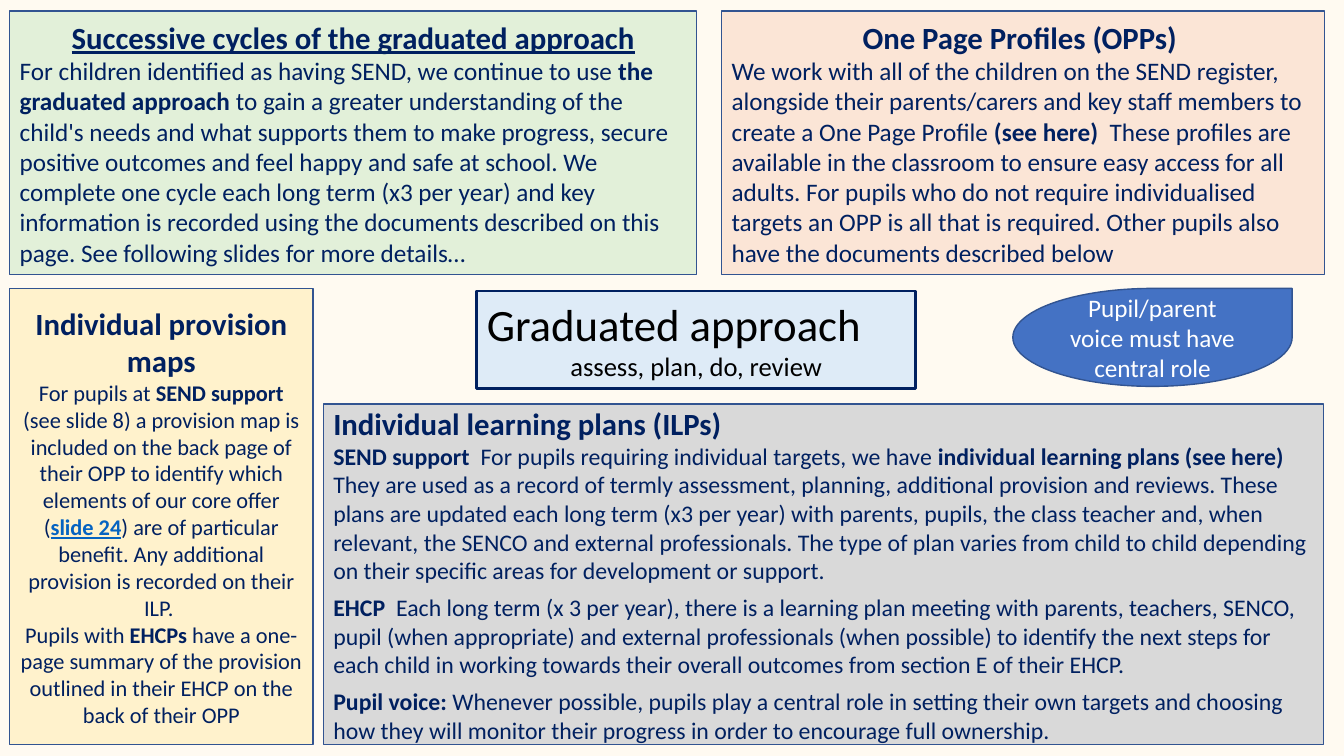
import pptx
import pptx.util
import pptx.dml.color
import pptx.enum.shapes
import pptx.enum.text

Pt = pptx.util.Pt
SHAPE = pptx.enum.shapes.MSO_SHAPE
ALIGN = pptx.enum.text.PP_ALIGN
ANCHOR = pptx.enum.text.MSO_ANCHOR
NAVY, EDGE, LINK = "002060", "325491", "0563C1"

CYCLES = [
    [("For children identified as having SEND, we continue to use ", ""),
     ("the graduated approach", "bold"),
     (" to gain a greater understanding of the child's needs and what supports them to make "
      "progress, secure positive outcomes and feel happy and safe at school. We complete one "
      "cycle each long term (x3 per year) and key information is recorded using the documents "
      "described on this page. See following slides for more details…", "")],
]
PROFILES = [
    [("We work with all of the children on the SEND register, alongside their parents/carers "
      "and key staff members to create a One Page Profile ", ""),
     ("(see here) ", "bold"),
     (" These profiles are available in the classroom to ensure easy access for all adults. "
      "For pupils who do not require individualised targets an OPP is all that is required. "
      "Other pupils also have the documents described below", "")],
]
PLANS = [
    [("SEND support  ", "bold"),
     ("For pupils requiring individual targets, we have ", ""),
     ("individual learning plans (see here) ", "bold"),
     ("They are used as a record of termly assessment, planning, additional provision and "
      "reviews. These plans are updated each long term (x3 per year) with parents, pupils, the "
      "class teacher and, when relevant, the SENCO and external professionals. The type of plan "
      "varies from child to child depending on their specific areas for development or "
      "support.", "")],
    [("EHCP  ", "bold"),
     ("Each long term (x 3 per year), there is a learning plan meeting with parents, teachers, "
      "SENCO, pupil (when appropriate) and external professionals (when possible) to identify "
      "the next steps for each child in working towards their overall outcomes from section E "
      "of their EHCP.", "")],
    [("Pupil voice: ", "bold"),
     ("Whenever possible, pupils play a central role in setting their own targets and choosing "
      "how they will monitor their progress in order to encourage full ownership.", "")],
]
MAPS = [
    [("For pupils at ", ""), ("SEND support ", "bold"),
     ("(see slide 8) a provision map is included on the back page of their OPP to identify "
      "which elements of our core offer (", ""),
     ("slide 24", "link"),
     (") are of particular benefit. Any additional provision is recorded on their ILP. ", "")],
    [("Pupils with ", ""), ("EHCPs ", "bold"),
     ("have a one-page summary of the provision outlined in their EHCP on the back of their "
      "OPP", "")],
]


def rgb(value):
    """Turn a hex string into a colour."""
    return pptx.dml.color.RGBColor.from_string(value)


def paint(sp, fill, line, width=1):
    """Fill and outline a shape."""
    sp.fill.solid()
    sp.fill.fore_color.rgb = rgb(fill)
    sp.line.color.rgb = rgb(line)
    sp.line.width = Pt(width)


def style(r, size, color, bold=False, underline=False):
    """Format one run."""
    r.font.name = "Calibri"
    r.font.size = Pt(size)
    r.font.bold = bold
    r.font.underline = underline
    r.font.color.rgb = rgb(color)


def add_block(s, shape, box, fill):
    """Add an outlined shape with middle-anchored text and return it."""
    sp = s.shapes.add_shape(shape, *map(Pt, box))
    sp.shadow.inherit = False
    paint(sp, fill, EDGE)
    sp.text_frame.word_wrap = True
    sp.text_frame.vertical_anchor = ANCHOR.MIDDLE
    return sp


def add_panel(s, box, fill, heading, body, size, head_align=ALIGN.CENTER,
              body_align=ALIGN.LEFT, gap=0, underline=False):
    """Add a coloured panel with a heading and body paragraphs."""
    tf = add_block(s, SHAPE.RECTANGLE, box, fill).text_frame
    tf.text = heading
    tf.paragraphs[0].alignment = head_align
    style(tf.paragraphs[0].runs[0], 22, NAVY, True, underline)
    for i, runs in enumerate(body):
        p = tf.add_paragraph()
        p.alignment = body_align
        p.space_before = Pt(gap if i else 0)
        for text, kind in runs:
            r = p.add_run()
            r.text = text
            link = kind == "link"
            style(r, size, LINK if link else NAVY, kind != "", link)


def add_title(s, box):
    """Place the title with its line of steps in a framed box."""
    sp = s.shapes.title
    sp.left, sp.top, sp.width, sp.height = map(Pt, box)
    paint(sp, "DEEBF7", NAVY, 1.75)
    tf = sp.text_frame
    tf.text = "Graduated approach\nassess, plan, do, review"
    tf.word_wrap = True
    tf.auto_size = pptx.enum.text.MSO_AUTO_SIZE.NONE
    tf.vertical_anchor = ANCHOR.TOP
    for p, size, align in zip(tf.paragraphs, (32, 19), (ALIGN.LEFT, ALIGN.CENTER)):
        p.alignment = align
        style(p.runs[0], size, "000000")


def add_voice(s, box):
    """Add the teardrop about pupil and parent voice."""
    tf = add_block(s, SHAPE.TEAR, box, "4472C4").text_frame
    tf.text = "Pupil/parent voice must have central role"
    tf.paragraphs[0].alignment = ALIGN.CENTER
    style(tf.paragraphs[0].runs[0], 18, "FFFFFF")


def main():
    """Build and save the slide."""
    prs = pptx.Presentation()
    prs.slide_width, prs.slide_height = Pt(960), Pt(540)
    s = prs.slides.add_slide(prs.slide_layouts[5])
    s.background.fill.solid()
    s.background.fill.fore_color.rgb = rgb("FFFAF1")
    add_panel(s, (7, 8, 490.5, 188), "E2F0D9",
              "Successive cycles of the graduated approach", CYCLES, 18, underline=True)
    add_panel(s, (515.5, 8, 430.5, 188), "FBE5D6", "One Page Profiles (OPPs) ", PROFILES, 18)
    add_panel(s, (231, 288.5, 714.5, 243.5), "D9D9D9", "Individual learning plans (ILPs)",
              PLANS, 17, head_align=ALIGN.LEFT, gap=6)
    add_panel(s, (7, 206, 216.5, 326), "FFF2CC", "Individual provision maps", MAPS, 16,
              body_align=ALIGN.CENTER)
    add_title(s, (340.5, 208, 313.5, 69.5))
    add_voice(s, (723.5, 206, 199.5, 70))
    prs.save("out.pptx")


if __name__ == "__main__":
    main()
